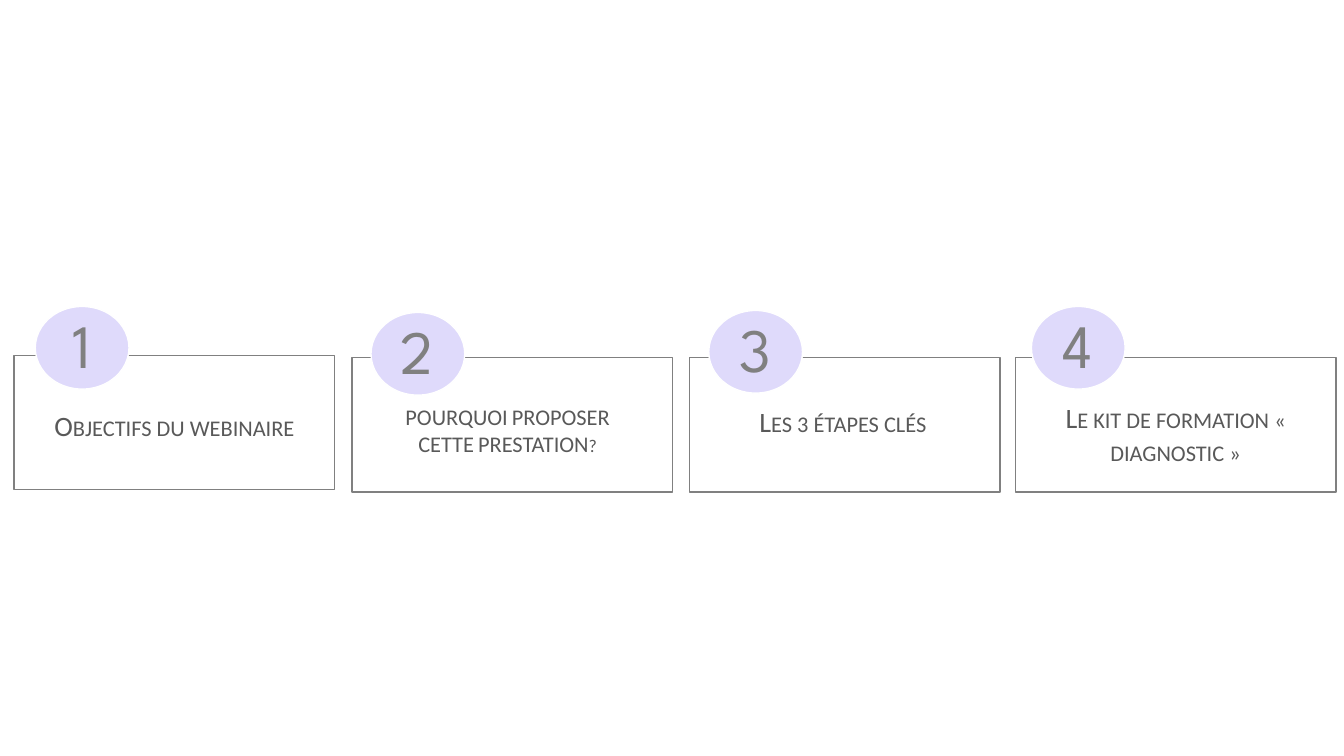
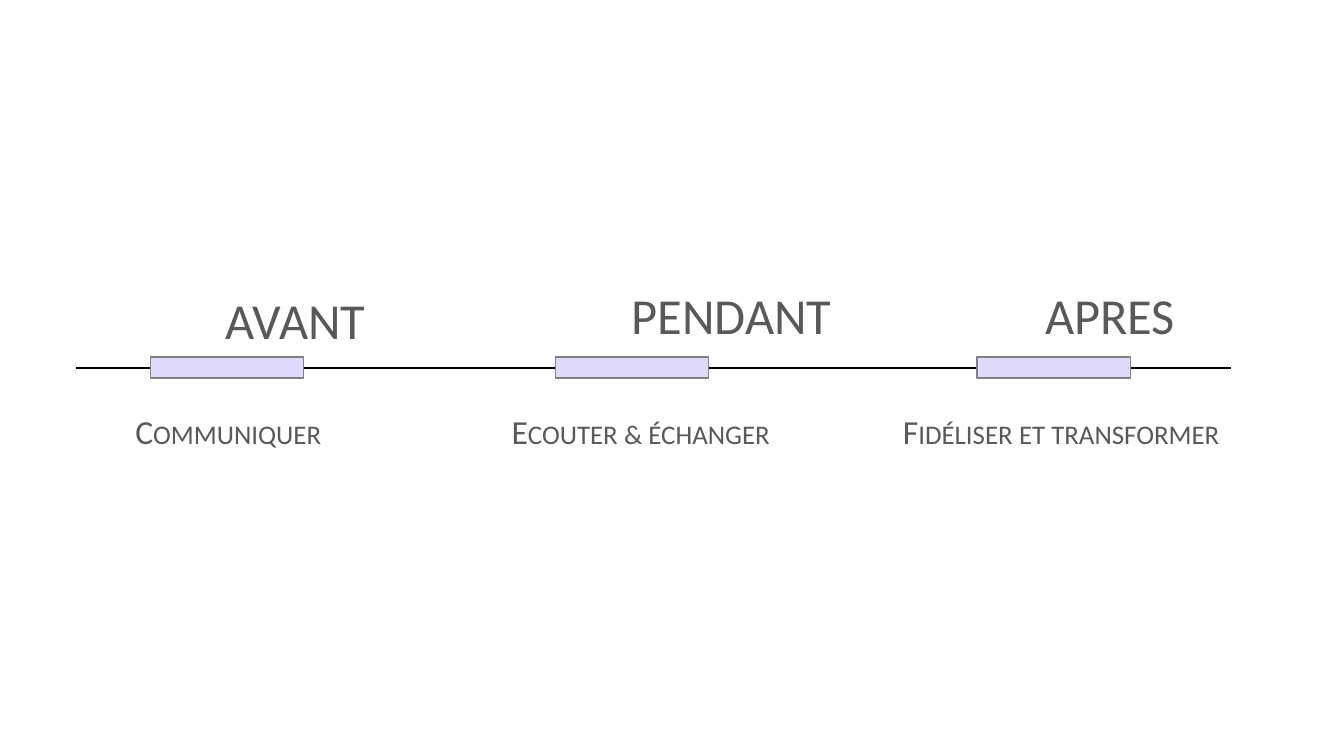
import pptx
import pptx.util
import pptx.dml.color
import pptx.enum.shapes
import pptx.enum.text
import pptx.oxml.ns
from dataclasses import dataclass

Inches = pptx.util.Inches
Pt = pptx.util.Pt
SHAPE = pptx.enum.shapes.MSO_SHAPE

# Content: agenda cards (lengths in inches)
AGENDA = [
    dict(lines=["Objectifs du webinaire"], size=20,
         card=(0.14, 3.53, 3.18), label=(0.39, 4.00, 2.68, 0.44), badge=(0.35, 3.04)),
    dict(lines=["POURQUOI PROPOSER", "CETTE PRESTATION?"], size=16,
         card=(3.49, 3.55, 3.18), label=(3.46, 3.95, 3.15, 0.64), badge=(3.68, 3.10)),
    dict(lines=["Les 3 étapes clés"], size=20,
         card=(6.84, 3.55, 3.08), label=(6.86, 3.96, 3.00, 0.44), badge=(7.03, 3.08)),
    dict(lines=["Le kit de formation « diagnostic »"], size=20,
         card=(10.07, 3.55, 3.18), label=(10.07, 3.92, 3.18, 0.77), badge=(10.23, 3.04)),
]
CARD_HEIGHT = 1.33
BADGE_SIZE = (0.93, 0.82)
NUMBER_OFFSET = (0.19, -0.04)
NUMBER_SIZE = (0.54, 0.84)

# Content: timeline phases as name, name place, marker left, action, action left
PHASES = [
    ("AVANT", (0.29, 2.82, 3.90), 1.49, "Communiquer", 0.26),
    ("PENDANT", (4.26, 2.77, 4.01), 5.51, "Ecouter & échanger", 4.35),
    ("APRES", (8.36, 2.77, 4.01), 9.69, "Fidéliser et transformer", 8.52),
]
AXIS_LEFT, AXIS_RIGHT, AXIS_TOP = 0.75, 12.21, 3.65
MARKER_TOP, MARKER_SIZE = 3.54, (1.52, 0.21)
ACTION_TOP, ACTION_SIZE = 4.03, (4.01, 0.50)


# Theme
def rgb(value):
    return pptx.dml.color.RGBColor.from_string(value)


@dataclass(frozen=True)
class Theme:
    white = rgb("FFFFFF")
    lavender = rgb("DFDAFB")
    grey = rgb("808080")
    text = rgb("595959")
    black = rgb("000000")
    text_font = "Calibri"
    number_font = "League Spartan"
    number_size = 44
    phase_size = 36
    action_size = 24
    line_width = 1


THEME = Theme()


# Shared parts
def add_block(shapes, kind, place, fill, line):
    block = shapes.add_shape(kind, *map(Inches, place))
    block.shadow.inherit = False
    block.fill.solid()
    block.fill.fore_color.rgb = fill
    block.line.color.rgb = line
    block.line.width = Pt(THEME.line_width)


def add_label(shapes, place, lines, size, font=THEME.text_font, color=THEME.text,
              small_caps=True, wrap=True):
    frame = shapes.add_textbox(*map(Inches, place)).text_frame
    frame.word_wrap = wrap
    frame.auto_size = pptx.enum.text.MSO_AUTO_SIZE.SHAPE_TO_FIT_TEXT
    frame.text = "\n".join(lines)
    for paragraph in frame.paragraphs:
        paragraph.alignment = pptx.enum.text.PP_ALIGN.CENTER
        paragraph.font.name = font
        paragraph.font.size = Pt(size)
        paragraph.font.color.rgb = color
        if small_caps:
            for run in paragraph.runs:
                run._r.get_or_add_rPr().set("cap", "small")


def add_axis(shapes):
    axis = shapes.add_connector(
        pptx.enum.shapes.MSO_CONNECTOR.STRAIGHT,
        Inches(AXIS_LEFT), Inches(AXIS_TOP), Inches(AXIS_RIGHT), Inches(AXIS_TOP))
    axis.line.color.rgb = THEME.black
    axis.line.width = Pt(THEME.line_width)
    properties = axis._element.spPr
    properties.append(properties.makeelement(pptx.oxml.ns.qn("a:effectLst"), {}))


# Slides
def build_agenda(slide):
    for number, topic in enumerate(AGENDA, start=1):
        shapes = slide.shapes.add_group_shape().shapes
        add_block(shapes, SHAPE.RECTANGLE, (*topic["card"], CARD_HEIGHT),
                  THEME.white, THEME.grey)
        add_label(shapes, topic["label"], topic["lines"], topic["size"])
        add_block(shapes, SHAPE.OVAL, (*topic["badge"], *BADGE_SIZE),
                  THEME.lavender, THEME.white)
        left, top = (b + o for b, o in zip(topic["badge"], NUMBER_OFFSET))
        add_label(shapes, (left, top, *NUMBER_SIZE), [str(number)], THEME.number_size,
                  THEME.number_font, THEME.grey, small_caps=False, wrap=False)


def build_timeline(slide):
    shapes = slide.shapes
    add_axis(shapes)
    for name, name_place, marker_left, action, action_left in PHASES:
        add_block(shapes, SHAPE.RECTANGLE, (marker_left, MARKER_TOP, *MARKER_SIZE),
                  THEME.lavender, THEME.grey)
        add_label(shapes, (*name_place, 0.71), [name], THEME.phase_size)
        add_label(shapes, (action_left, ACTION_TOP, *ACTION_SIZE), [action],
                  THEME.action_size)


def main():
    deck = pptx.Presentation()
    deck.slide_width, deck.slide_height = Inches(13.33), Inches(7.5)
    blank = deck.slide_layouts[6]
    for build in (build_agenda, build_timeline):
        build(deck.slides.add_slide(blank))
    deck.save("out.pptx")


if __name__ == "__main__":
    main()
